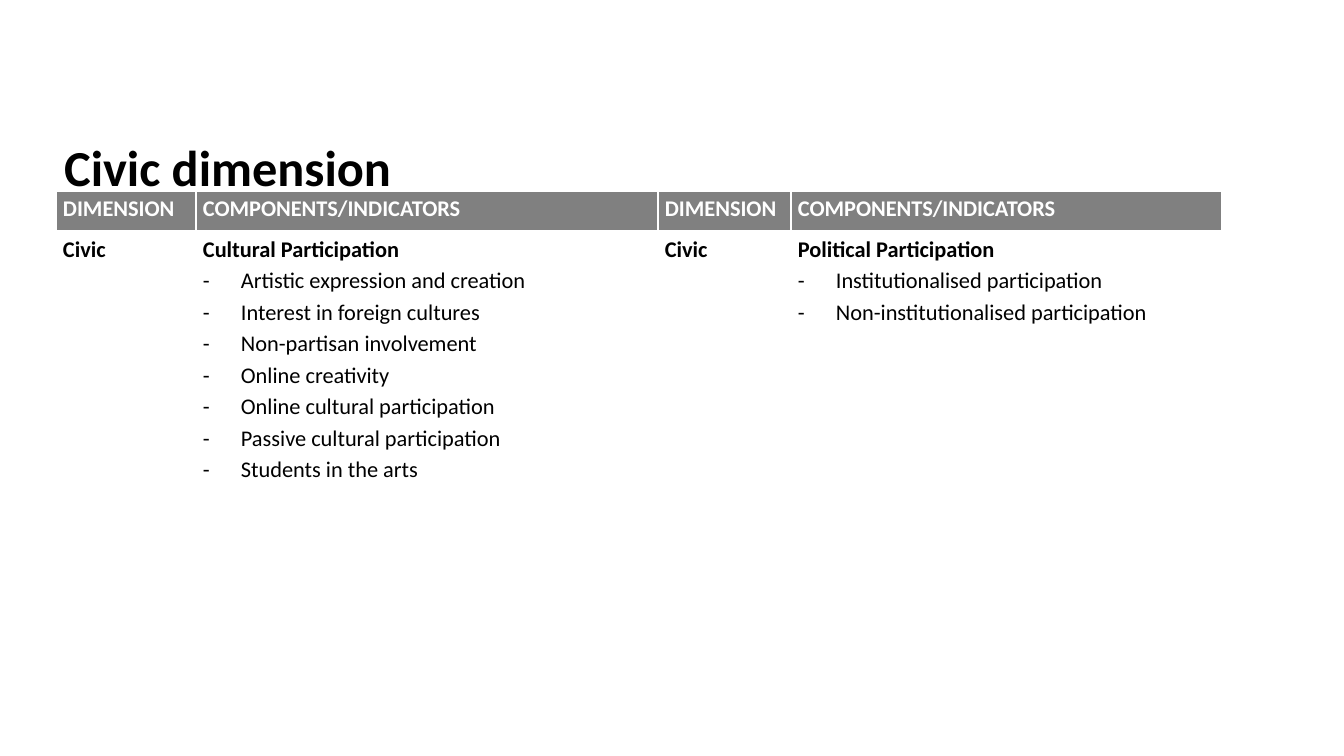
from lxml import etree
from pptx import Presentation
from pptx.dml.color import RGBColor
from pptx.enum.text import MSO_ANCHOR, PP_ALIGN
from pptx.oxml.ns import qn
from pptx.util import Emu, Pt

LEFT = PP_ALIGN.LEFT
TOP, MIDDLE = MSO_ANCHOR.TOP, MSO_ANCHOR.MIDDLE

WHITE = RGBColor(0xFF, 0xFF, 0xFF)
BLACK = RGBColor(0x00, 0x00, 0x00)
GREY = RGBColor(0x80, 0x80, 0x80)

FONT = "Calibri"
PX_PER_INCH = 100.8
SLIDE_SIZE = (1344, 756)
COLUMN_WIDTHS = (140, 462, 133, 431)
ROW_HEIGHTS = (41, 245)
BULLET_INDENT = 38
THIN, THICK = 1, 3  # border widths in points

HEADERS = ("DIMENSION", "COMPONENTS/INDICATORS")
DIMENSION = "Civic"
COMPONENTS = (
    ("Cultural Participation", (
        "Artistic expression and creation",
        "Interest in foreign cultures",
        "Non-partisan involvement",
        "Online creativity",
        "Online cultural participation",
        "Passive cultural participation",
        "Students in the arts",
    )),
    ("Political Participation", (
        "Institutionalised participation",
        "Non-institutionalised participation",
    )),
)


def px(length):
    return Emu(round(length * 914400 / PX_PER_INCH))


def apply_format(target, values):
    for name, value in values.items():
        setattr(target, name, value)


def write_para(para, text, size, color, bold, spacing):
    apply_format(para, {"alignment": LEFT, "line_spacing": spacing,
                        "space_before": Pt(0), "space_after": Pt(0)})
    span = para.add_run()
    span.text = text
    apply_format(span.font, {"name": FONT, "size": Pt(size), "bold": bold})
    span.font.color.rgb = color


def add_dash(para):
    properties = para._p.get_or_add_pPr()
    properties.set("marL", str(px(BULLET_INDENT)))
    properties.set("indent", str(-px(BULLET_INDENT)))
    etree.SubElement(properties, qn("a:buFont"), typeface=FONT)
    etree.SubElement(properties, qn("a:buChar"), char="-")


def set_borders(cell, top, bottom):
    properties = cell._tc.get_or_add_tcPr()
    for side, width in (("L", THIN), ("R", THIN), ("T", top), ("B", bottom)):
        line = etree.SubElement(properties, qn(f"a:ln{side}"), w=str(Pt(width)))
        fill = etree.SubElement(line, qn("a:solidFill"))
        etree.SubElement(fill, qn("a:srgbClr"), val=str(WHITE))


def fill_cell(cell, heading, items=(), is_header=False):
    apply_format(cell, {"margin_left": px(7), "margin_right": px(7),
                        "margin_top": 0, "margin_bottom": 0,
                        "vertical_anchor": TOP})
    if is_header:
        set_borders(cell, THIN, THICK)
        cell.fill.solid()
        cell.fill.fore_color.rgb = GREY
    else:
        set_borders(cell, THICK, THIN)
        cell.fill.background()
    color = WHITE if is_header else BLACK
    frame = cell.text_frame
    write_para(frame.paragraphs[0], heading, 16, color, True, 1.15)
    for item in items:
        para = frame.add_paragraph()
        add_dash(para)
        write_para(para, item, 16, color, False, 1.15)


def add_title(page, text):
    title = page.shapes.title
    apply_format(title, {"left": px(54), "top": px(144),
                         "width": px(1159), "height": px(52)})
    title.text_frame.vertical_anchor = MIDDLE
    write_para(title.text_frame.paragraphs[0], text, 36, BLACK, True, 0.9)


def add_dimension_table(page):
    frame = page.shapes.add_table(
        len(ROW_HEIGHTS), len(COLUMN_WIDTHS), px(56), px(191),
        px(sum(COLUMN_WIDTHS)), px(sum(ROW_HEIGHTS)))
    table = frame.table
    table.horz_banding = False
    for column, width in zip(table.columns, COLUMN_WIDTHS):
        column.width = px(width)
    for row, height in zip(table.rows, ROW_HEIGHTS):
        row.height = px(height)

    # Each component takes a pair of columns
    for pair, (component, indicators) in enumerate(COMPONENTS):
        first = pair * len(HEADERS)
        for offset, header in enumerate(HEADERS):
            fill_cell(table.cell(0, first + offset), header, is_header=True)
        fill_cell(table.cell(1, first), DIMENSION)
        fill_cell(table.cell(1, first + 1), component, indicators)


def main():
    deck = Presentation()
    deck.slide_width, deck.slide_height = map(px, SLIDE_SIZE)
    page = deck.slides.add_slide(deck.slide_layouts[5])
    add_title(page, "Civic dimension")
    add_dimension_table(page)
    deck.save("out.pptx")


if __name__ == "__main__":
    main()
